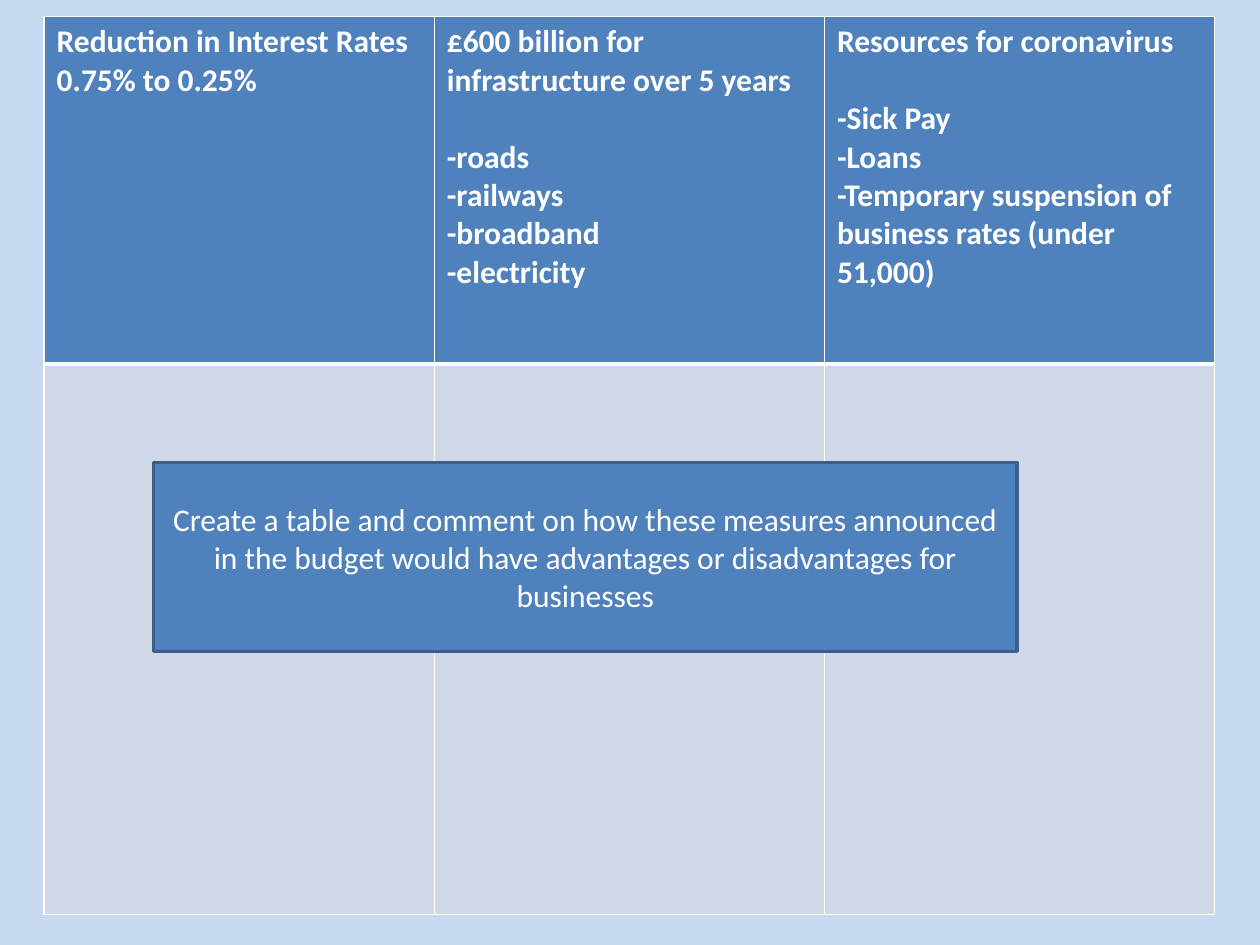
from lxml.etree import SubElement
from pptx import Presentation
from pptx.dml.color import RGBColor
from pptx.enum.shapes import MSO_SHAPE
from pptx.enum.text import MSO_ANCHOR, PP_ALIGN
from pptx.oxml.ns import qn
from pptx.util import Inches, Pt

MEASURES = [
    (["Reduction in Interest Rates", "0.75% to 0.25%"], []),
    (["£600 billion for infrastructure over 5 years"],
     ["-roads", "-railways", "-broadband", "-electricity"]),
    (["Resources for coronavirus"],
     ["-Sick Pay", "-Loans", "-Temporary suspension of business rates (under 51,000)"]),
]
TASK = ("Create a table and comment on how these measures announced in the budget "
        "would have advantages or disadvantages for businesses")
BLUE, PALE, WHITE, EDGE, SKY = "4F81BD", "D0D8E8", "FFFFFF", "3A5F8C", "C6D9F1"
LEFT, TOP, TABLE_WIDTH = 0.35, 0.13, 9.29
ROW_HEIGHTS = [2.76, 4.37]
LINE_GAP = 22


def color(value):
    return RGBColor.from_string(value)


def paint(target, value):
    target.fill.solid()
    target.fill.fore_color.rgb = color(value)


def write(para, text, bold=False):
    span = para.add_run()
    span.text = text
    span.font.name = "Calibri"
    span.font.size = Pt(18)
    span.font.bold = bold
    span.font.color.rgb = color(WHITE)


def add_borders(cell, widths):
    properties = cell._tc.get_or_add_tcPr()
    for side, width in widths.items():
        line = SubElement(properties, qn(f"a:ln{side}"), w=str(Pt(width)))
        fill = SubElement(line, qn("a:solidFill"))
        SubElement(fill, qn("a:srgbClr"), val=WHITE)


def fill_header(cell, heading, items):
    frame = cell.text_frame
    for index, text in enumerate(heading + items):
        para = frame.add_paragraph() if index else frame.paragraphs[0]
        write(para, text, bold=True)
        if items and index == len(heading) - 1:
            para.space_after = Pt(LINE_GAP)


def add_measures(page):
    table = page.shapes.add_table(
        len(ROW_HEIGHTS), len(MEASURES), Inches(LEFT), Inches(TOP),
        Inches(TABLE_WIDTH), Inches(sum(ROW_HEIGHTS))).table
    for row, height in zip(table.rows, ROW_HEIGHTS):
        row.height = Inches(height)
    for column, (heading, items) in enumerate(MEASURES):
        header, answer = table.cell(0, column), table.cell(1, column)
        add_borders(header, {"L": 1, "R": 1, "T": 1, "B": 3})
        add_borders(answer, {"L": 1, "R": 1, "T": 3, "B": 1})
        paint(header, BLUE)
        paint(answer, PALE)
        fill_header(header, heading, items)


def add_task(page):
    box = page.shapes.add_shape(
        MSO_SHAPE.RECTANGLE, Inches(1.22), Inches(3.67), Inches(6.85), Inches(1.5))
    box.shadow.inherit = False
    paint(box, BLUE)
    box.line.color.rgb = color(EDGE)
    box.line.width = Pt(2)
    box.text_frame.word_wrap = True
    box.text_frame.vertical_anchor = MSO_ANCHOR.MIDDLE
    para = box.text_frame.paragraphs[0]
    para.alignment = PP_ALIGN.CENTER
    write(para, TASK)


def main():
    deck = Presentation()
    deck.slide_width, deck.slide_height = Inches(10), Inches(7.5)
    page = deck.slides.add_slide(deck.slide_layouts[6])
    paint(page.background, SKY)
    add_measures(page)
    add_task(page)
    deck.save("out.pptx")


if __name__ == "__main__":
    main()
